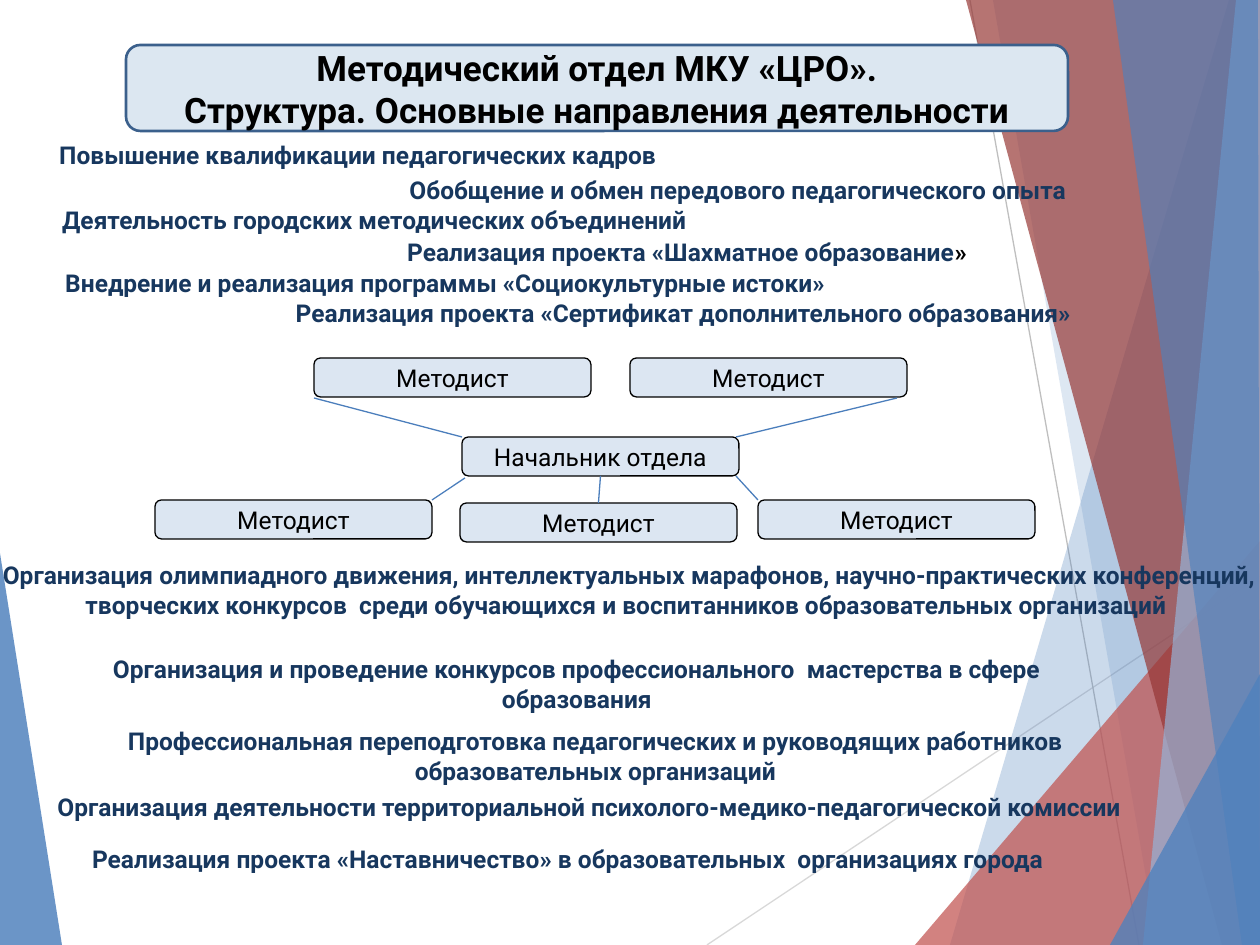
from pptx import Presentation
from pptx import util as u
from pptx.dml.color import RGBColor
from pptx.enum import shapes as s, text as t
from pptx.oxml.ns import qn
from lxml import etree

PX = 914400 // 126
THEME = {
    "font": "Roboto", "head": 20, "body": 14,
    "ink": "000000", "navy": "17375E", "blue": "4F81BD", "red": "C0504D",
    "wine": "963634", "sky": "96B4D8", "panel": "DCE7F1", "edge": "3B608C",
    "node": "DCE6F2", "link": "4B7EBC", "pale": "D8D8D8", "gray": "BFBFBF",
}
W, H = 1260, 945

SIDE = ("blue", 84, [(0, 553), (62, H), (0, H)])
RAYS = [("pale", (707, H), (W, 576)), ("gray", (970, 0), (1139, H))]
FACETS = [
    ("blue", 29, [(1229, 0), (950, H), (W, H), (W, 0)]),
    ("blue", 19, [(993, 0), (1158, H), (W, H), (W, 0)]),
    ("red", 71, [(915, H), (W, 541), (W, H)]),
    ("wine", 69, [(966, 0), (1222, H), (W, H), (W, 0)]),
    ("sky", 69, [(1236, 0), (1143, H), (W, H), (W, 0)]),
    ("blue", 64, [(1113, 0), (1242, H), (W, H), (1258, 0)]),
    ("blue", 79, [(1110, H), (W, 674), (W, H)]),
]

TITLE = ["Методический отдел МКУ «ЦРО».", "Структура. Основные направления деятельности"]
BANNER = (126, 45, 942, 86)

NODE = (277, 39)
STAFF = [(314, 358), (630, 358), (155, 500), (460, 503), (758, 500)]
CHIEF = (462, 437)
LINKS = [((462, 437), (314, 398)), ((736, 437), (897, 398)),
         ((465, 478), (432, 500)), ((736, 476), (758, 500))]

ROW, PAIR, TALL = 43, 72, 102
TASKS = [
    ((37, 134, 648, ROW), ["Повышение квалификации педагогических кадров "]),
    ((384, 169, 708, ROW), ["Обобщение и обмен передового педагогического опыта"]),
    ((37, 199, 675, ROW), ["Деятельность городских методических объединений"]),
    ((360, 231, 654, ROW), ["Реализация проекта «Шахматное образование", "»"]),
    ((38, 262, 821, ROW), ["Внедрение и реализация программы «Социокультурные истоки» "]),
    ((269, 292, 829, ROW), ["Реализация проекта «Сертификат дополнительного образования»"]),
    ((-18, 554, 1295, TALL), [
        "Организация олимпиадного движения, интеллектуальных марафонов, "
        "научно-практических конференций, творческих конкурсов  среди обучающихся "
        "и воспитанников образовательных организаций "]),
    ((77, 648, 1000, TALL), [
        "Организация и проведение конкурсов профессионального  мастерства в сфере образования"]),
    ((37, 720, 1117, PAIR), [
        "Профессиональная переподготовка педагогических и руководящих работников "
        "образовательных организаций"]),
    ((25, 786, 1129, ROW), [
        "Организация деятельности территориальной психолого-медико-педагогической комиссии"]),
    ((67, 838, 1002, ROW), [
        "Реализация проекта «Наставничество» в образовательных  организациях города"]),
]


def emu(nums):
    return [n * PX for n in nums]


def tone(name):
    return RGBColor.from_string(THEME[name])


def paint(shape, fill, line=None, width=0.75):
    shape.shadow.inherit = False
    shape.fill.solid()
    shape.fill.fore_color.rgb = tone(fill)
    if line:
        shape.line.color.rgb = tone(line)
        shape.line.width = u.Pt(width)
    else:
        shape.line.fill.background()


def style(para, size, color, bold=False):
    para.alignment = t.PP_ALIGN.CENTER
    font = para.font
    font.name, font.size, font.bold = THEME["font"], u.Pt(THEME[size]), bold
    font.color.rgb = tone(color)


def facet(slide, color, alpha, points):
    first, *rest = [emu(p) for p in points]
    pen = slide.shapes.build_freeform(*first, scale=1.0)
    pen.add_line_segments(rest, close=True)
    shape = pen.convert_to_shape()
    paint(shape, color)
    fill = shape.element.spPr.find(qn("a:solidFill"))
    etree.SubElement(fill[0], qn("a:alpha"), val=str(alpha * 1000))


def line(slide, color, start, end):
    wire = slide.shapes.add_connector(s.MSO_CONNECTOR.STRAIGHT, *emu(start + end))
    wire.line.color.rgb = tone(color)
    wire.line.width = u.Pt(0.75)
    etree.SubElement(wire.element.spPr, qn("a:effectLst"))
    return wire


def block(slide, box):
    return slide.shapes.add_shape(s.MSO_SHAPE.ROUNDED_RECTANGLE, *emu(box))


def banner(slide):
    panel = block(slide, BANNER)
    paint(panel, "panel", "edge", 1.5)
    title = slide.shapes.title
    panel.element.addnext(title.element)
    title.left, title.top, title.width, title.height = emu(BANNER)
    frame = title.text_frame
    frame.text = "\n".join(TITLE)
    frame.auto_size = t.MSO_AUTO_SIZE.NONE
    frame.vertical_anchor = t.MSO_ANCHOR.MIDDLE
    for para in frame.paragraphs:
        style(para, "head", "ink", True)
        para.space_before = u.Pt(0)


def node(slide, spot, label):
    shape = block(slide, spot + NODE)
    paint(shape, "node", "ink")
    frame = shape.text_frame
    frame.text = label
    frame.margin_top = frame.margin_bottom = 0
    frame.vertical_anchor = t.MSO_ANCHOR.MIDDLE
    style(frame.paragraphs[0], "body", "ink")
    return shape


def chart(slide):
    chief = node(slide, CHIEF, "Начальник отдела")
    staff = [node(slide, spot, "Методист") for spot in STAFF]
    for start, end in LINKS:
        line(slide, "link", start, end)
    stem = line(slide, "link", CHIEF, STAFF[3])
    stem.begin_connect(chief, 2)
    stem.end_connect(staff[3], 0)


def task(slide, box, parts):
    frame = slide.shapes.add_textbox(*emu(box)).text_frame
    frame.word_wrap = box[3] > ROW
    para = frame.paragraphs[0]
    style(para, "body", "navy", True)
    for part in parts:
        run = para.add_run()
        run.text = part
        if part == "»":
            run.font.color.rgb = tone("ink")


def main():
    deck = Presentation()
    deck.slide_width, deck.slide_height = emu((W, H))
    slide = deck.slides.add_slide(deck.slide_layouts[5])
    facet(slide, *SIDE)
    for ray in RAYS:
        line(slide, *ray)
    for shard in FACETS:
        facet(slide, *shard)
    banner(slide)
    chart(slide)
    for box, parts in TASKS:
        task(slide, box, parts)
    deck.save("out.pptx")


if __name__ == "__main__":
    main()
